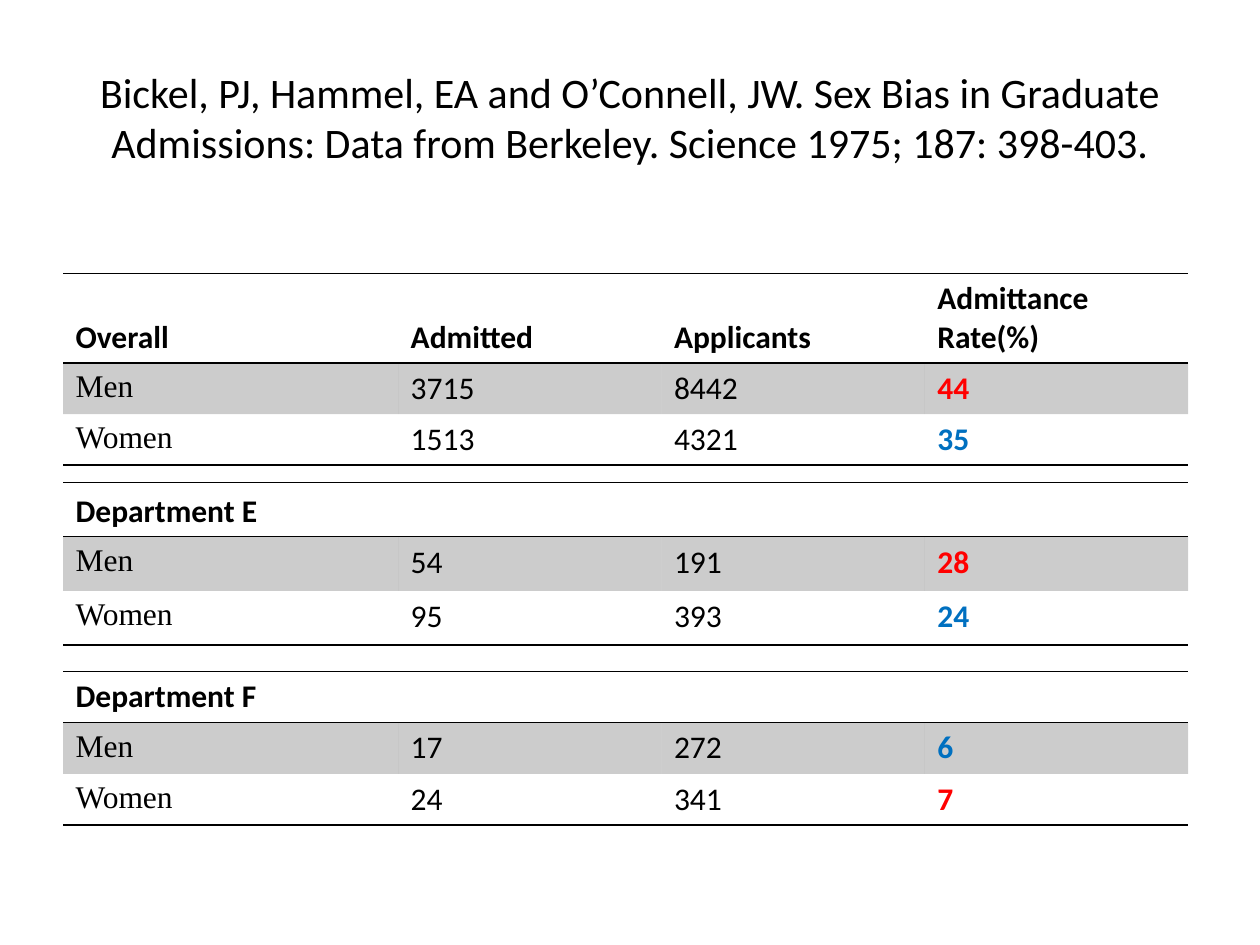
from pptx import Presentation
from pptx.dml.color import RGBColor
from pptx.enum.text import MSO_ANCHOR, PP_ALIGN
from pptx.oxml.ns import qn
from pptx.oxml.xmlchemy import OxmlElement
from pptx.util import Inches, Pt

MIDDLE = MSO_ANCHOR.MIDDLE
BOTTOM = MSO_ANCHOR.BOTTOM
CENTER = PP_ALIGN.CENTER

COLORS = {"black": "000000", "higher": "FF0000", "lower": "0070C0"}
BODY_FONT = "Calibri"
LABEL_FONT = "Times New Roman"
PLAIN_TABLE_STYLE = "{2D5ABB26-0587-4C30-8999-92F81FD0307C}"
COLUMN_WIDTHS = [2.66, 2.09, 2.09, 2.09]
TITLE = (
    "Bickel, PJ, Hammel, EA and O’Connell, JW. Sex Bias in Graduate "
    "Admissions: Data from Berkeley. Science 1975; 187: 398-403."
)
ADMISSIONS = [
    (2.17, [0.71, 0.4, 0.4], [
        ["Overall", "Admitted", "Applicants", "Admittance Rate(%)"],
        ["Men", "3715", "8442", "44"],
        ["Women", "1513", "4321", "35"],
    ]),
    (3.83, [0.43, 0.43, 0.43], [
        ["Department E", "", "", ""],
        ["Men", "54", "191", "28"],
        ["Women", "95", "393", "24"],
    ]),
    (5.33, [0.4, 0.4, 0.4], [
        ["Department F", "", "", ""],
        ["Men", "17", "272", "6"],
        ["Women", "24", "341", "7"],
    ]),
]


def format_paragraph(paragraph, size, font=BODY_FONT, color="black", bold=False):
    for span in paragraph.runs:
        span.font.name = font
        span.font.size = Pt(size)
        span.font.bold = bold
        span.font.color.rgb = RGBColor.from_string(COLORS[color])


def add_title(page):
    title = page.shapes.title
    title.left, title.top = Inches(0.5), Inches(0.3)
    title.width, title.height = Inches(9), Inches(1.25)
    frame = title.text_frame
    frame.text = TITLE
    frame.vertical_anchor = MIDDLE
    frame.paragraphs[0].alignment = CENTER
    format_paragraph(frame.paragraphs[0], 24)


def add_color(parent, color):
    fill = OxmlElement("a:solidFill")
    value = OxmlElement("a:srgbClr")
    value.set("val", COLORS[color])
    fill.append(value)
    parent.append(fill)
    return value


def add_border(cell, side):
    line = OxmlElement(f"a:ln{side}")
    line.set("w", str(Pt(1)))
    add_color(line, "black")
    cell._tc.get_or_add_tcPr().append(line)


def shade(cell):
    value = add_color(cell._tc.get_or_add_tcPr(), "black")
    alpha = OxmlElement("a:alpha")
    alpha.set("val", "20000")
    value.append(alpha)


def style_cell(cell, row, column, rate_color):
    if row == 0:
        cell.vertical_anchor = BOTTOM
        add_border(cell, "T")
    if row != 1:
        add_border(cell, "B")
        cell.fill.background()
    else:
        shade(cell)
    is_rate = row > 0 and column == 3
    format_paragraph(
        cell.text_frame.paragraphs[0],
        18,
        font=LABEL_FONT if row > 0 and column == 0 else BODY_FONT,
        color=rate_color if is_rate else "black",
        bold=row == 0 or is_rate,
    )


def add_admissions_table(page, top, heights, rows):
    frame = page.shapes.add_table(
        len(rows), len(COLUMN_WIDTHS), Inches(0.5), Inches(top),
        Inches(sum(COLUMN_WIDTHS)), Inches(sum(heights)),
    )
    table = frame.table
    table.horz_banding = False
    table._tbl.tblPr.find(qn("a:tableStyleId")).text = PLAIN_TABLE_STYLE
    for column, width in zip(table.columns, COLUMN_WIDTHS):
        column.width = Inches(width)
    best_rate = max(int(values[-1]) for values in rows[1:])
    for row, (height, values) in enumerate(zip(heights, rows)):
        table.rows[row].height = Inches(height)
        rate_color = "higher" if values[-1] == str(best_rate) else "lower"
        for column, value in enumerate(values):
            cell = table.cell(row, column)
            cell.text = value
            style_cell(cell, row, column, rate_color)


def main():
    deck = Presentation()
    deck.slide_width, deck.slide_height = Inches(10), Inches(7.5)
    page = deck.slides.add_slide(deck.slide_layouts[5])
    add_title(page)
    for top, heights, rows in ADMISSIONS:
        add_admissions_table(page, top, heights, rows)
    deck.save("out.pptx")


if __name__ == "__main__":
    main()
